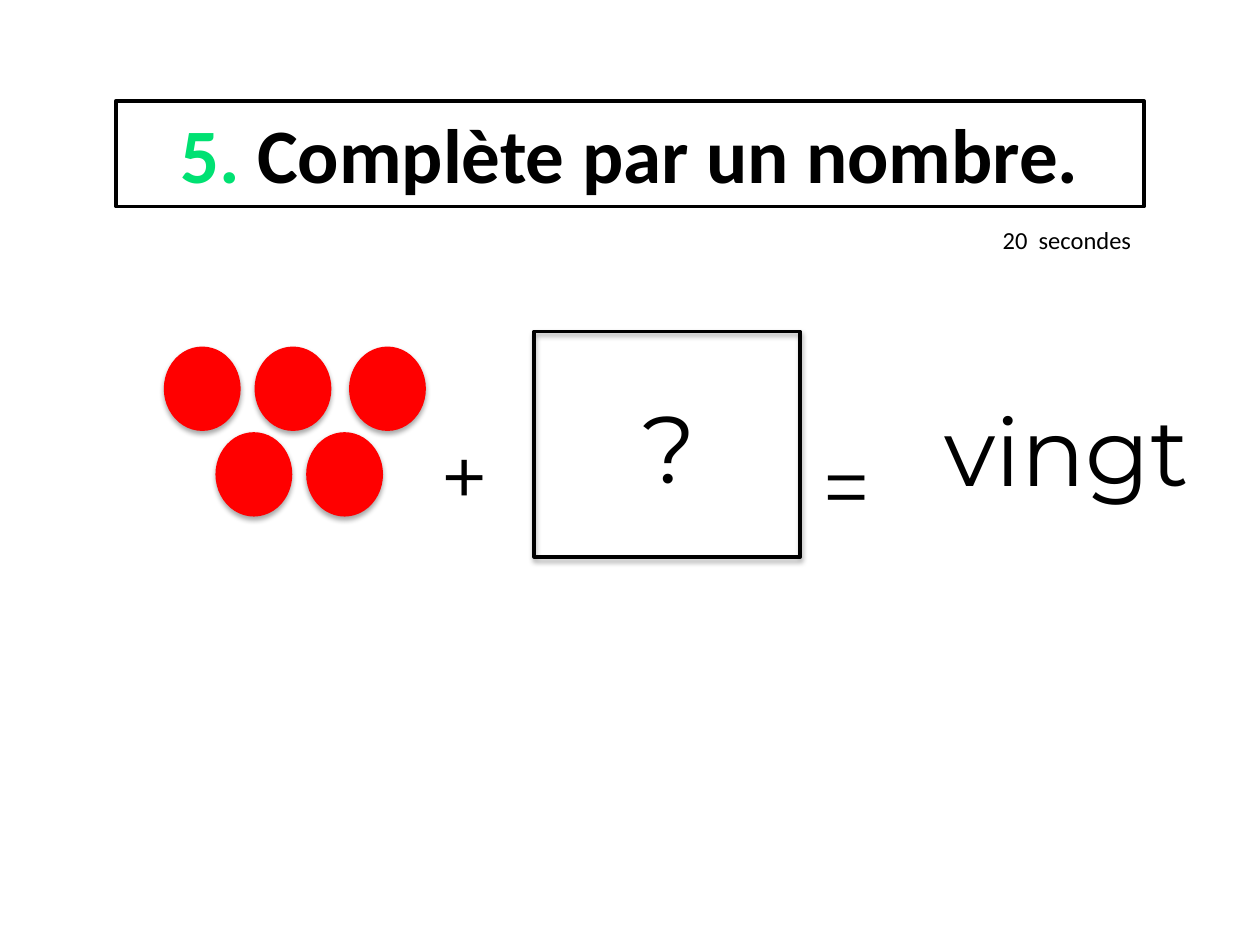
from lxml.etree import SubElement
from pptx import Presentation
from pptx.dml.color import RGBColor
from pptx.enum.shapes import MSO_SHAPE as Preset
from pptx.enum.text import MSO_ANCHOR as Anchor, MSO_AUTO_SIZE as AutoSize, PP_ALIGN as Align
from pptx.oxml.ns import qn
from pptx.util import Inches, Pt

COLORS = {"ink": "000000", "paper": "FFFFFF", "number": "00E172", "counter": "FF0000"}
WIDTH, HEIGHT = Inches(10), Inches(7.5)

# Content: every place is left, top, width, height in percent of the slide
TITLE = [("5.", "number"), (" Complète par un nombre.", "ink")]
TITLE_PLACE = (9.2, 10.67, 81.6, 11.2)
TIMER = "20  secondes"
TIMER_PLACE = (78.6, 23.2, 12.3, 4.53)
EQUATION = [
    ("?", 54, (50, 40.53, 6.9, 13.47)),
    ("=", 48, (64.3, 45.2, 6.9, 12.13)),
    ("vingt", 54, (74, 40.8, 24.3, 13.47)),
    ("+", 48, (34, 44.13, 6.9, 12.13)),
]
ANSWER_PLACE = (42.4, 35.07, 21.1, 23.87)
COUNTER_SIZE = (6.1, 8.93)
COUNTER_ROWS = [(36.67, (13, 20.2, 27.7)), (45.73, (17.1, 24.3))]


def color(name):
    return RGBColor.from_string(COLORS[name])


def locate(left, top, width, height):
    return (int(WIDTH * left / 100), int(HEIGHT * top / 100),
            int(WIDTH * width / 100), int(HEIGHT * height / 100))


def add_figure(shapes, preset, place, fill=None, outlined=False, shadowed=False):
    shape = shapes.add_shape(preset, *locate(*place))
    if fill:
        shape.fill.solid()
        shape.fill.fore_color.rgb = color(fill)
    else:
        shape.fill.background()
    if outlined:
        shape.line.color.rgb = color("ink")
        shape.line.width = Pt(2)
    else:
        shape.line.fill.background()
    shape.shadow.inherit = False
    if shadowed:
        effects = shape._element.spPr.find(qn("a:effectLst"))
        shadow = SubElement(effects, qn("a:outerShdw"), blurRad=str(Pt(3.1)),
                            dist=str(Pt(1.8)), dir="5400000", rotWithShape="0")
        tint = SubElement(shadow, qn("a:srgbClr"), val=COLORS["ink"])
        SubElement(tint, qn("a:alpha"), val="35000")
    return shape


def write(shape, runs, size, font, align=Align.LEFT, bold=False, wrap=True):
    frame = shape.text_frame
    frame.word_wrap = wrap
    frame.auto_size = AutoSize.SHAPE_TO_FIT_TEXT
    frame.vertical_anchor = Anchor.TOP
    paragraph = frame.paragraphs[0]
    paragraph.alignment = align
    paragraph.font.size = Pt(size)
    paragraph.font.name = font
    paragraph.font.bold = bold
    for text, tone in runs:
        run = paragraph.add_run()
        run.text = text
        run.font.color.rgb = color(tone)


presentation = Presentation()
presentation.slide_width, presentation.slide_height = WIDTH, HEIGHT
slide = presentation.slides.add_slide(presentation.slide_layouts[6])

# Title and time limit
title = add_figure(slide.shapes, Preset.RECTANGLE, TITLE_PLACE, "paper", outlined=True)
write(title, TITLE, 44, "Calibri", Align.CENTER, bold=True)
timer = add_figure(slide.shapes, Preset.RECTANGLE, TIMER_PLACE, "paper")
write(timer, [(TIMER, "ink")], 14, "Calibri", wrap=False)

# Equation text and the frame around the unknown
for term, size, place in EQUATION:
    write(slide.shapes.add_textbox(*locate(*place)), [(term, "ink")], size, "Montserrat")
add_figure(slide.shapes, Preset.RECTANGLE, ANSWER_PLACE, outlined=True, shadowed=True)

# Five counters
counters = slide.shapes.add_group_shape()
for top, lefts in COUNTER_ROWS:
    for left in lefts:
        add_figure(counters.shapes, Preset.OVAL, (left, top, *COUNTER_SIZE),
                   "counter", shadowed=True)

presentation.save("out.pptx")
